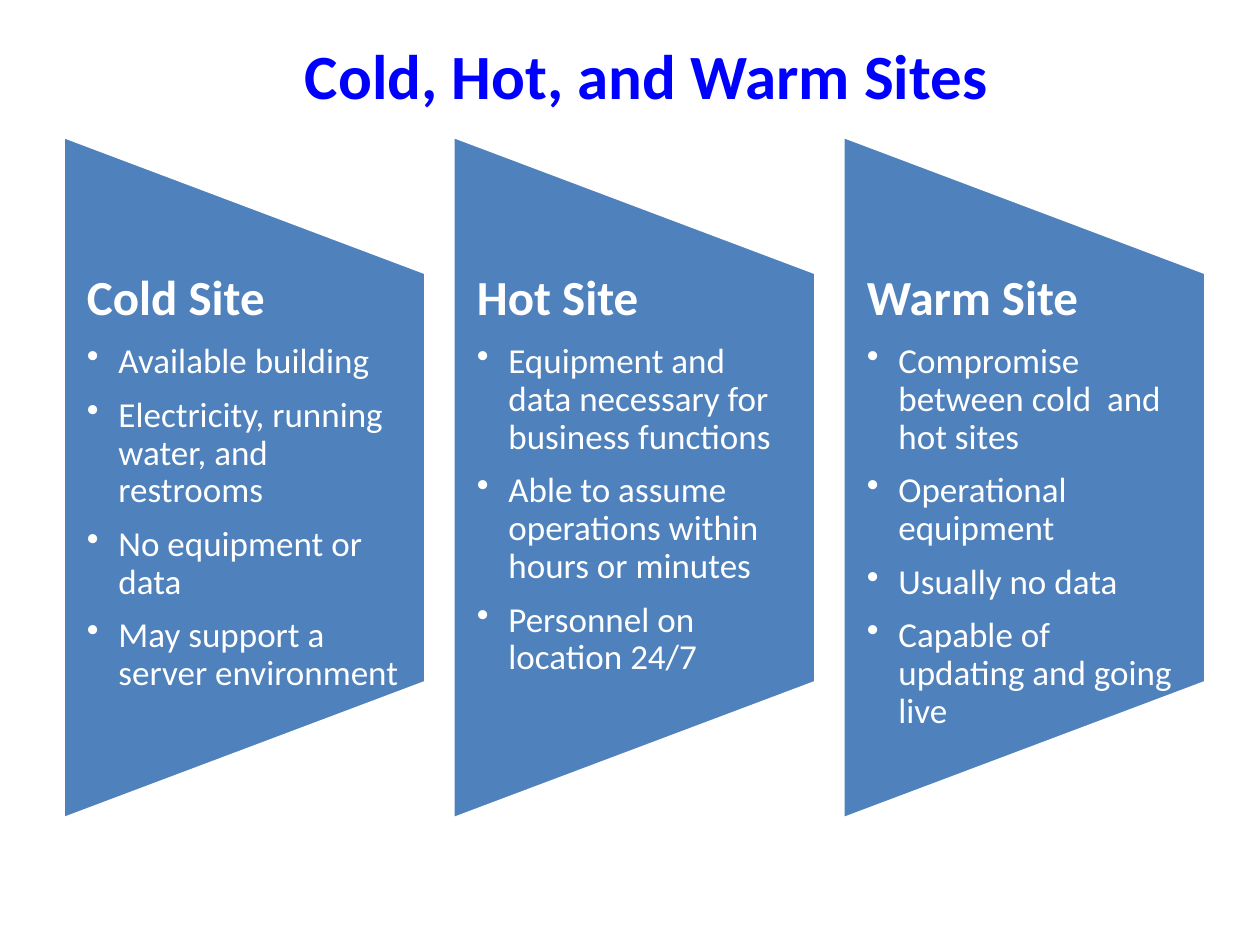
from lxml import etree
from pptx import Presentation
from pptx.dml.color import RGBColor
from pptx.enum.shapes import MSO_SHAPE
from pptx.enum.text import MSO_ANCHOR, PP_ALIGN
from pptx.oxml.ns import qn
from pptx.util import Inches, Pt

WHITE = RGBColor(0xFF, 0xFF, 0xFF)
TITLE_BLUE = RGBColor(0x00, 0x00, 0xFF)
PANEL_BLUE = RGBColor(0x4F, 0x81, 0xBD)
PANEL_SHAPE = MSO_SHAPE.FLOWCHART_MANUAL_OPERATION
CENTER = PP_ALIGN.CENTER
LEFT = PP_ALIGN.LEFT
MIDDLE = MSO_ANCHOR.MIDDLE
TOP = MSO_ANCHOR.TOP

# Panel grid, in inches
FIRST_LEFT, PITCH = 0.5, 3.095
PANEL_WIDTH, PANEL_HEIGHT, PANEL_TOP = 2.88, 5.42, 1.08
TEXT_TOP, TEXT_HEIGHT = 2.17, 3.25

SITES = [
    ("Cold Site", [
        "Available building",
        "Electricity, running water, and restrooms",
        "No equipment or data",
        "May support a server environment",
    ]),
    ("Hot Site", [
        "Equipment and data necessary for  business functions",
        "Able to assume operations within hours or minutes",
        "Personnel on location 24/7",
    ]),
    ("Warm Site", [
        "Compromise between cold  and hot sites",
        "Operational equipment",
        "Usually no data",
        "Capable of updating and going live",
    ]),
]


class SiteSlide:
    font_name = "Calibri"

    def __init__(self, presentation):
        self.slide = presentation.slides.add_slide(presentation.slide_layouts[5])

    def style(self, paragraph, size, color, bold=False):
        font = paragraph.font
        font.name = self.font_name
        font.size = Pt(size)
        font.bold = bold
        font.color.rgb = color

    def title(self, text, left, top, width, height):
        title = self.slide.shapes.title
        title.left, title.top = Inches(left), Inches(top)
        title.width, title.height = Inches(width), Inches(height)
        frame = title.text_frame
        frame.text = text
        frame.vertical_anchor = MIDDLE
        paragraph = frame.paragraphs[0]
        paragraph.alignment = CENTER
        self.style(paragraph, 36, TITLE_BLUE, bold=True)

    def panel(self, left):
        # Turned a quarter left, so the unrotated box is centred on the panel
        offset = (PANEL_HEIGHT - PANEL_WIDTH) / 2
        panel = self.slide.shapes.add_shape(
            PANEL_SHAPE, Inches(left - offset), Inches(PANEL_TOP + offset),
            Inches(PANEL_HEIGHT), Inches(PANEL_WIDTH))
        panel.rotation = 270
        panel.shadow.inherit = False
        panel.fill.solid()
        panel.fill.fore_color.rgb = PANEL_BLUE
        panel.line.color.rgb = WHITE
        panel.line.width = Pt(2)

    def bullet(self, paragraph):
        paragraph.level = 1
        properties = paragraph._p.get_or_add_pPr()
        properties.set("marL", str(Inches(0.25)))
        properties.set("indent", str(-Inches(0.25)))
        etree.SubElement(properties, qn("a:buChar")).set("char", "•")

    def site_text(self, left, heading, points):
        box = self.slide.shapes.add_textbox(
            Inches(left), Inches(TEXT_TOP), Inches(PANEL_WIDTH), Inches(TEXT_HEIGHT))
        frame = box.text_frame
        frame.word_wrap = True
        frame.vertical_anchor = TOP
        frame.margin_left = frame.margin_right = Inches(0.19)
        frame.margin_top = frame.margin_bottom = 0
        for index, text in enumerate([heading, *points]):
            is_heading = index == 0
            paragraph = frame.paragraphs[0] if is_heading else frame.add_paragraph()
            paragraph.text = text
            paragraph.alignment = LEFT
            paragraph.line_spacing = 0.9
            paragraph.space_after = Pt(9.8 if is_heading else 9)
            if not is_heading:
                self.bullet(paragraph)
            self.style(paragraph, 28 if is_heading else 20, WHITE, bold=is_heading)


def main():
    presentation = Presentation()
    presentation.slide_width = Inches(10)
    presentation.slide_height = Inches(7.5)
    page = SiteSlide(presentation)

    # Title
    page.title("Cold, Hot, and Warm Sites", 0.59, 0.33, 9.08, 0.52)

    # One panel with its text for each kind of site
    for column, (heading, points) in enumerate(SITES):
        left = FIRST_LEFT + column * PITCH
        page.panel(left)
        page.site_text(left, heading, points)

    presentation.save("out.pptx")


if __name__ == "__main__":
    main()
